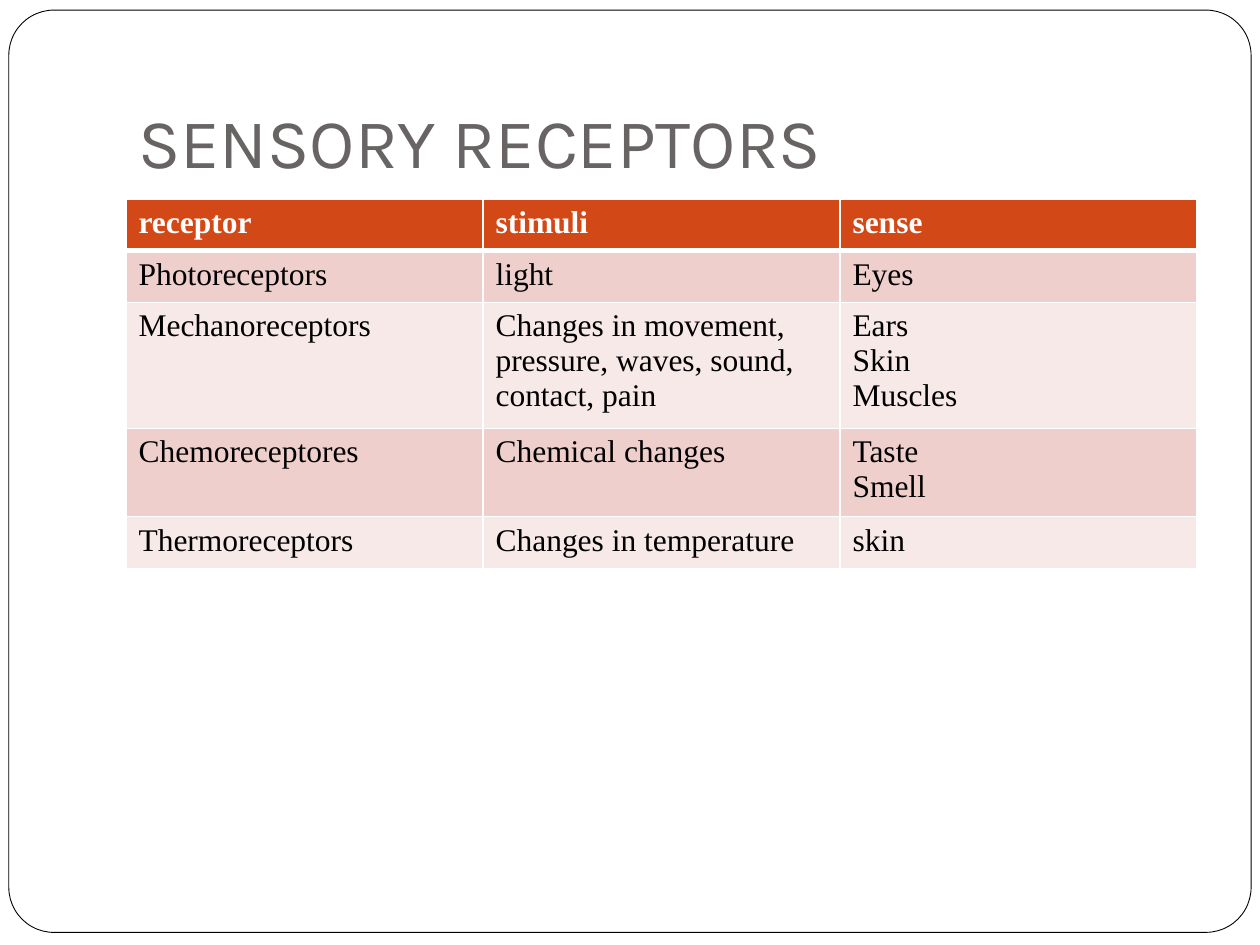
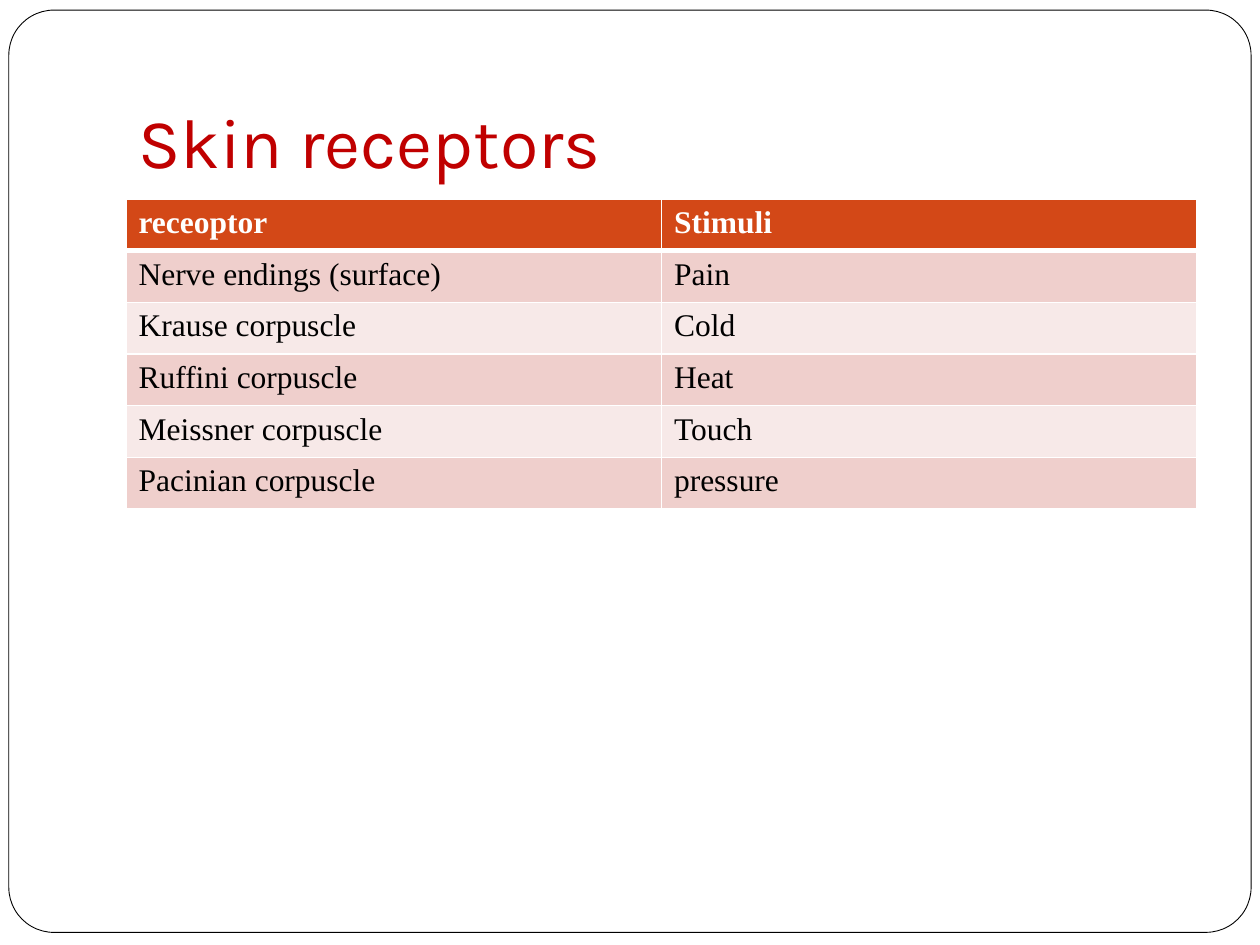
import lxml.etree
import pptx
import pptx.dml.color
import pptx.enum.shapes
import pptx.enum.text
import pptx.oxml.ns
import pptx.util

Inches = pptx.util.Inches
Pt = pptx.util.Pt

COLOURS = {
    "white": "FFFFFF",
    "frame": "000000",
    "text": "000000",
    "title grey": "696464",
    "title red": "C00000",
    "header": "D34817",
    "band dark": "EFCFCC",
    "band light": "F7E9E8",
}
TITLE_FONT = "Karla"
TABLE_FONT = "Times New Roman"

FRAME_BOX = (0.07, 0.08, 9.86, 7.32)
TITLE_BOX = (1, 0.3, 8.5, 1.25)
TABLE_LEFT, TABLE_TOP, TABLE_WIDTH = 1, 1.58, 8.5
ROW_HEIGHT = 0.41
THIN, THICK = 1, 3

SENSORY_ROWS = [
    ("receptor", "stimuli", "sense"),
    ("Photoreceptors", "light", "Eyes"),
    ("Mechanoreceptors",
     "Changes in movement, pressure, waves, sound, contact, pain",
     "Ears\nSkin\nMuscles"),
    ("Chemoreceptores", "Chemical changes", "Taste\nSmell"),
    ("Thermoreceptors", "Changes in temperature", "skin"),
]
SKIN_ROWS = [
    ("receoptor", "Stimuli"),
    ("Nerve endings (surface)", "Pain"),
    ("Krause corpuscle", "Cold"),
    ("Ruffini corpuscle", "Heat"),
    ("Meissner corpuscle", "Touch"),
    ("Pacinian corpuscle", "pressure"),
]


def colour(name):
    return pptx.dml.color.RGBColor.from_string(COLOURS[name])


def style_font(font, name, size, colour_name, bold=False):
    font.name = name
    font.size = Pt(size)
    font.bold = bold
    font.color.rgb = colour(colour_name)


def add_frame(slide, box):
    frame = slide.shapes.add_shape(
        pptx.enum.shapes.MSO_SHAPE.ROUNDED_RECTANGLE, *map(Inches, box))
    frame.adjustments[0] = 0.049
    frame.shadow.inherit = False
    frame.fill.solid()
    frame.fill.fore_color.rgb = colour("white")
    frame.line.color.rgb = colour("frame")
    frame.line.width = Pt(0.5)


def add_title(slide, box, text, colour_name):
    text_frame = slide.shapes.add_textbox(*map(Inches, box)).text_frame
    text_frame.word_wrap = True
    text_frame.vertical_anchor = pptx.enum.text.MSO_ANCHOR.BOTTOM
    text_frame.margin_bottom = Inches(0.1)
    text_frame.text = text
    style_font(text_frame.paragraphs[0].font, TITLE_FONT, 40, colour_name)


def set_borders(cell, top, bottom):
    """Draw white borders, thin at the sides and of the given points above and below."""
    properties = cell._tc.get_or_add_tcPr()
    qn = pptx.oxml.ns.qn
    for side, width in (("L", THIN), ("R", THIN), ("T", top), ("B", bottom)):
        line = lxml.etree.SubElement(properties, qn(f"a:ln{side}"), w=str(Pt(width)))
        fill = lxml.etree.SubElement(line, qn("a:solidFill"))
        lxml.etree.SubElement(fill, qn("a:srgbClr"), val=COLOURS["white"])


def fill_cell(cell, text, row_index):
    is_header = row_index == 0
    band = "band dark" if row_index % 2 else "band light"
    set_borders(cell,
                top=THICK if row_index == 1 else THIN,
                bottom=THICK if is_header else THIN)
    cell.fill.solid()
    cell.fill.fore_color.rgb = colour("header" if is_header else band)
    cell.text = text
    for paragraph in cell.text_frame.paragraphs:
        style_font(paragraph.font, TABLE_FONT, 18,
                   "white" if is_header else "text", bold=is_header)


def add_receptor_table(slide, left, top, width, rows):
    column_count = len(rows[0])
    table = slide.shapes.add_table(
        len(rows), column_count, Inches(left), Inches(top),
        Inches(width), Inches(ROW_HEIGHT * len(rows))).table
    for column in table.columns:
        column.width = Inches(width / column_count)
    for row_index, texts in enumerate(rows):
        table.rows[row_index].height = Inches(ROW_HEIGHT)
        for column_index, text in enumerate(texts):
            fill_cell(table.cell(row_index, column_index), text, row_index)


def add_receptor_slide(presentation, title, title_colour, rows):
    slide = presentation.slides.add_slide(presentation.slide_layouts[6])
    add_frame(slide, FRAME_BOX)
    add_title(slide, TITLE_BOX, title, title_colour)
    add_receptor_table(slide, TABLE_LEFT, TABLE_TOP, TABLE_WIDTH, rows)


def main():
    presentation = pptx.Presentation()
    presentation.slide_width = Inches(10)
    presentation.slide_height = Inches(7.5)
    add_receptor_slide(presentation, "SENSORY RECEPTORS", "title grey", SENSORY_ROWS)
    add_receptor_slide(presentation, "Skin receptors", "title red", SKIN_ROWS)
    presentation.save("out.pptx")


if __name__ == "__main__":
    main()
